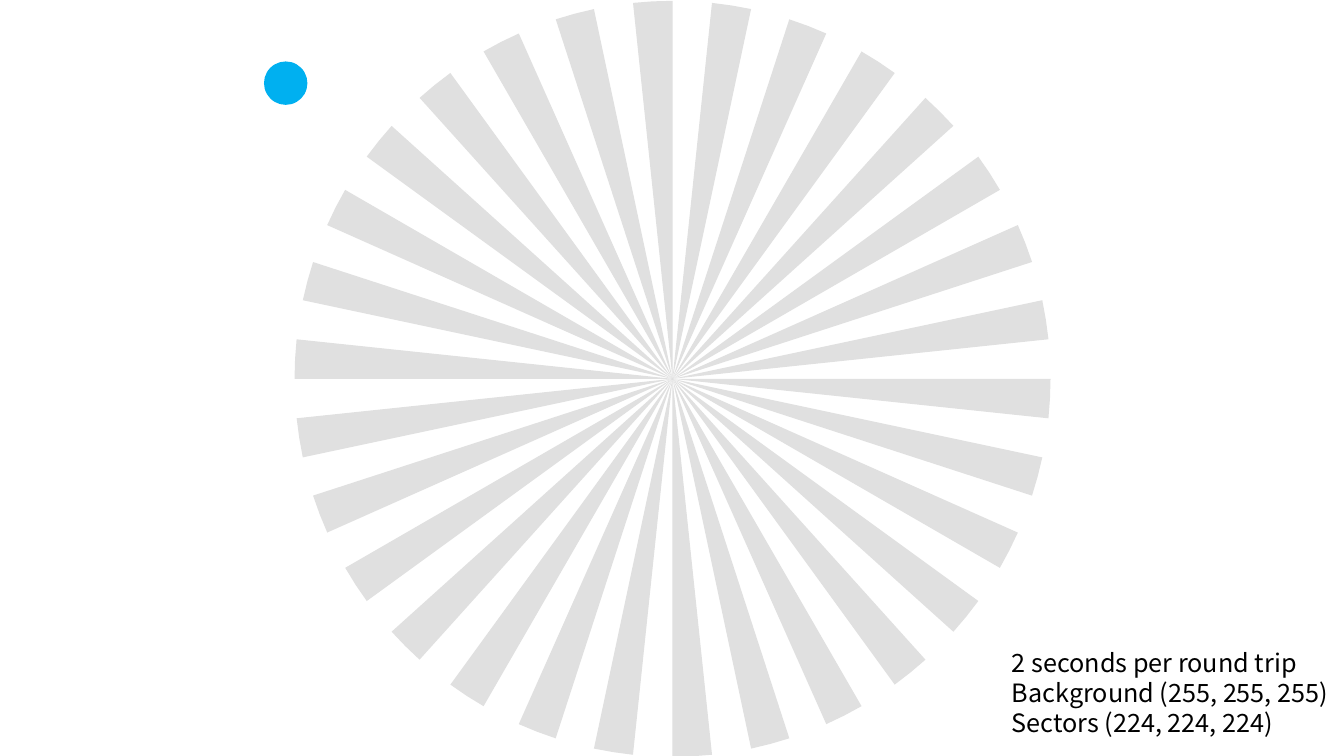
from dataclasses import dataclass
from math import cos, radians, sin

from pptx import Presentation
from pptx.dml.color import RGBColor
from pptx.enum.shapes import MSO_SHAPE
from pptx.enum.text import MSO_ANCHOR, PP_ALIGN
from pptx.util import Pt

OVAL = MSO_SHAPE.OVAL
TOP = MSO_ANCHOR.TOP
LEFT = PP_ALIGN.LEFT

CAPTION_LINES = [
    "2 seconds per round trip",
    "Background (255, 255, 255)",
    "Sectors (224, 224, 224)",
]
CAPTION_BOX = (715.7, 458.6, 244.1, 72.7)
DOT_BOX = (188.6, 43.9, 31, 31)
SECTOR_COUNT = 30
WHEEL_CENTRE = (480.4, 270.6)
WHEEL_RADIUS = 270


@dataclass(frozen=True)
class Theme:
    background: RGBColor = RGBColor(255, 255, 255)
    sector: RGBColor = RGBColor(224, 224, 224)
    dot: RGBColor = RGBColor(0, 176, 240)
    text: RGBColor = RGBColor(0, 0, 0)
    font: str = "Noto Sans CJK JP"
    text_size: float = 18
    line_pitch: float = 21.5


THEME = Theme()


def paint(shape, colour):
    shape.shadow.inherit = False
    shape.fill.solid()
    shape.fill.fore_color.rgb = colour
    shape.line.fill.background()


def rim_point(angle):
    """Point on the wheel's rim, with degrees running clockwise from the right."""
    x, y = WHEEL_CENTRE
    turn = radians(angle)
    return Pt(x + WHEEL_RADIUS * cos(turn)), Pt(y + WHEEL_RADIUS * sin(turn))


def add_wheel(slide):
    step = 360 / SECTOR_COUNT
    sweep = step / 2
    for index in range(SECTOR_COUNT):
        start = -index * step
        rim = [rim_point(start + sweep * part) for part in (0, 0.5, 1)]
        builder = slide.shapes.build_freeform(*map(Pt, WHEEL_CENTRE))
        builder.add_line_segments(rim, close=True)
        paint(builder.convert_to_shape(), THEME.sector)


def add_caption(slide):
    frame = slide.shapes.add_textbox(*map(Pt, CAPTION_BOX)).text_frame
    frame.word_wrap = False
    frame.vertical_anchor = TOP
    frame.text = "\n".join(CAPTION_LINES)
    for para in frame.paragraphs:
        para.alignment = LEFT
        para.line_spacing = Pt(THEME.line_pitch)
        for span in para.runs:
            span.font.name = THEME.font
            span.font.size = Pt(THEME.text_size)
            span.font.color.rgb = THEME.text


def main():
    deck = Presentation()
    deck.slide_width, deck.slide_height = Pt(960), Pt(540)
    slide = deck.slides.add_slide(deck.slide_layouts[6])
    slide.background.fill.solid()
    slide.background.fill.fore_color.rgb = THEME.background
    add_wheel(slide)
    add_caption(slide)
    paint(slide.shapes.add_shape(OVAL, *map(Pt, DOT_BOX)), THEME.dot)
    deck.save("out.pptx")


if __name__ == "__main__":
    main()
